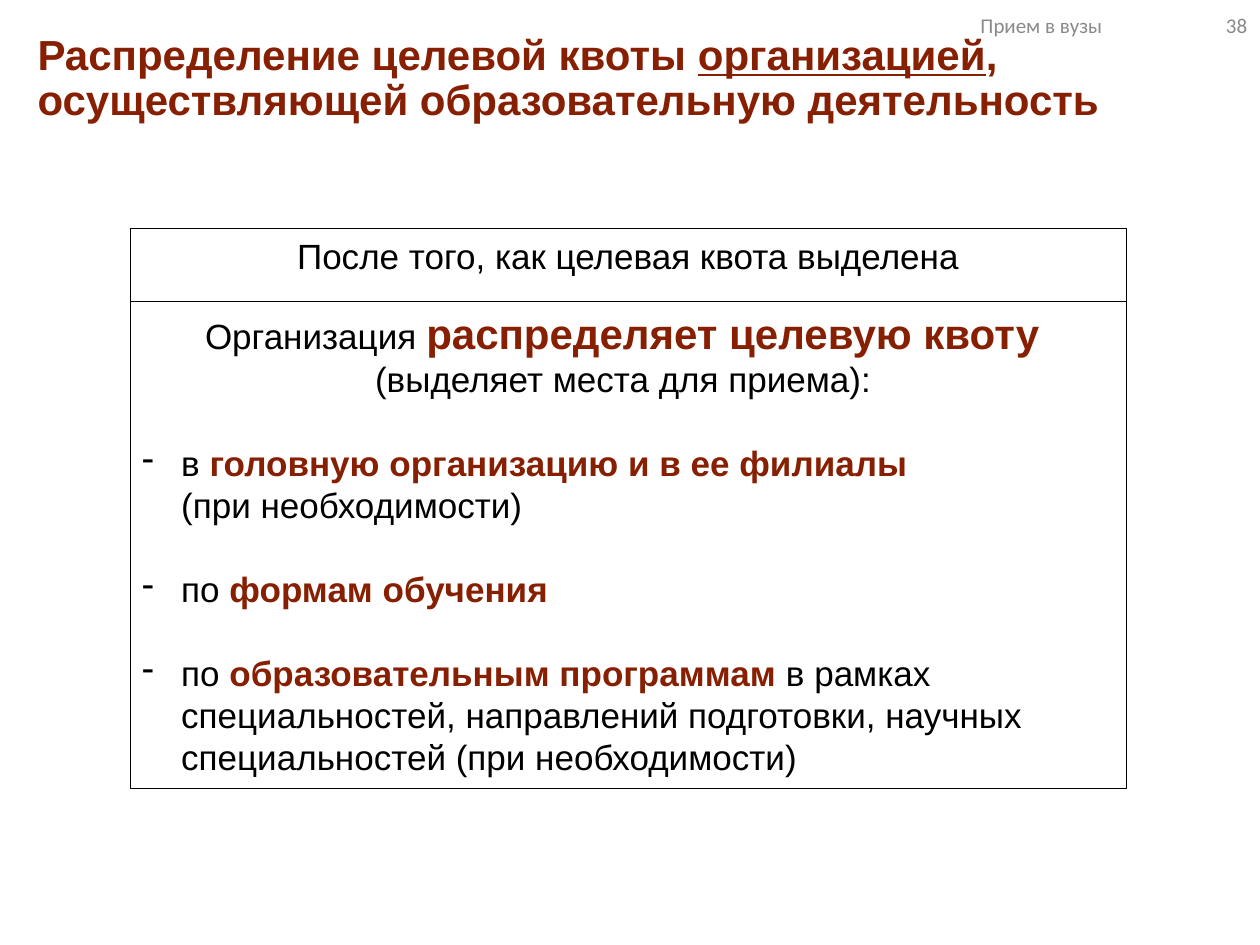
from dataclasses import dataclass

import pptx
import pptx.dml.color
import pptx.enum.shapes
import pptx.enum.text
import pptx.oxml.ns
import pptx.util
from lxml import etree

Inches = pptx.util.Inches
Pt = pptx.util.Pt
Align = pptx.enum.text.PP_ALIGN
Anchor = pptx.enum.text.MSO_ANCHOR


@dataclass(frozen=True)
class Theme:
    text: str = "000000"
    accent: str = "871F03"
    muted: str = "898989"
    paper: str = "FFFFFF"
    body_font: str = "Arial"
    header_font: str = "Calibri"
    header_size: int = 12
    body_size: int = 20
    title_size: int = 24
    item_gap: int = 24
    hanging: float = 0.31


class SlideBuilder:
    def __init__(self, slide, theme):
        self.slide = slide
        self.theme = theme

    def add_runs(self, paragraph, segments, **base):
        """Fill a paragraph from strings and (string, style) pairs; "\\v" breaks the line."""
        for segment in segments:
            if segment == "\v":
                paragraph.add_line_break()
                continue
            words, style = (segment, {}) if isinstance(segment, str) else segment
            look = {**base, **style}
            run = paragraph.add_run()
            run.text = words
            font = run.font
            font.name = look.get("font", self.theme.body_font)
            font.size = Pt(look.get("size", self.theme.body_size))
            font.bold = look.get("bold", False)
            font.underline = look.get("underline", False)
            color = look.get("color", self.theme.text)
            font.color.rgb = pptx.dml.color.RGBColor.from_string(color)

    def text_box(self, left, top, width, height, anchor=Anchor.TOP):
        frame = self.slide.shapes.add_textbox(
            Inches(left), Inches(top), Inches(width), Inches(height)).text_frame
        frame.word_wrap = True
        frame.vertical_anchor = anchor
        return frame

    def header(self, section, number):
        frame = self.text_box(7.05, 0, 2.95, 0.4, Anchor.MIDDLE)
        paragraph = frame.paragraphs[0]
        properties = paragraph._p.get_or_add_pPr()
        tabs = etree.SubElement(properties, pptx.oxml.ns.qn("a:tabLst"))
        for position in (1.6, 2.75):
            etree.SubElement(tabs, pptx.oxml.ns.qn("a:tab"),
                             pos=str(Inches(position)), algn="r")
        self.add_runs(paragraph, [f"\t{section}\t{number}"], font=self.theme.header_font,
                      size=self.theme.header_size, color=self.theme.muted)

    def title(self, segments):
        paragraph = self.text_box(0.2, 0.22, 9.8, 0.47).paragraphs[0]
        paragraph.line_spacing = 0.9
        self.add_runs(paragraph, segments, size=self.theme.title_size,
                      color=self.theme.accent, bold=True)

    def panel(self, top, height, centered, items=()):
        """Draw a framed panel: centred lines first, then dashed items."""
        shape = self.slide.shapes.add_shape(
            pptx.enum.shapes.MSO_SHAPE.RECTANGLE,
            Inches(1.03), Inches(top), Inches(7.91), Inches(height))
        shape.shadow.inherit = False
        shape.fill.solid()
        shape.fill.fore_color.rgb = pptx.dml.color.RGBColor.from_string(self.theme.paper)
        shape.line.color.rgb = pptx.dml.color.RGBColor.from_string(self.theme.text)
        shape.line.width = Pt(0.25)
        frame = shape.text_frame
        frame.word_wrap = True
        frame.auto_size = pptx.enum.text.MSO_AUTO_SIZE.SHAPE_TO_FIT_TEXT
        frame.vertical_anchor = Anchor.TOP
        for index, segments in enumerate(centered):
            paragraph = frame.add_paragraph() if index else frame.paragraphs[0]
            paragraph.alignment = Align.CENTER
            self.add_runs(paragraph, segments)
        for segments in items:
            self.dashed_item(frame.add_paragraph(), segments)

    def dashed_item(self, paragraph, segments):
        properties = paragraph._p.get_or_add_pPr()
        properties.set("marL", str(Inches(self.theme.hanging)))
        properties.set("indent", str(-Inches(self.theme.hanging)))
        etree.SubElement(properties, pptx.oxml.ns.qn("a:buChar"), char="-")
        paragraph.alignment = Align.LEFT
        paragraph.space_before = Pt(self.theme.item_gap)
        self.add_runs(paragraph, segments)


def main():
    presentation = pptx.Presentation()
    presentation.slide_width = Inches(10)
    presentation.slide_height = Inches(7.5)
    slide = presentation.slides.add_slide(presentation.slide_layouts[6])
    theme = Theme()
    builder = SlideBuilder(slide, theme)
    strong = {"color": theme.accent, "bold": True}

    builder.header("Прием в вузы", 38)
    builder.panel(1.81, 0.77, [["После того, как целевая квота выделена"]])
    builder.title([
        "Распределение целевой квоты ",
        ("организацией", {"underline": True}),
        ", осуществляющей образовательную деятельность",
    ])
    builder.panel(
        2.39, 3.87,
        centered=[
            ["Организация ",
             ("распределяет целевую квоту ", {**strong, "size": theme.title_size})],
            ["(выделяет места для приема): "],
        ],
        items=[
            ["в ", ("головную организацию и в ее филиалы", strong), "\v",
             "(при необходимости)"],
            ["по ", ("формам обучения", strong)],
            ["по ", ("образовательным программам ", strong),
             "в рамках специальностей, направлений подготовки, "
             "научных специальностей (при необходимости)"],
        ],
    )
    presentation.save("out.pptx")


if __name__ == "__main__":
    main()
